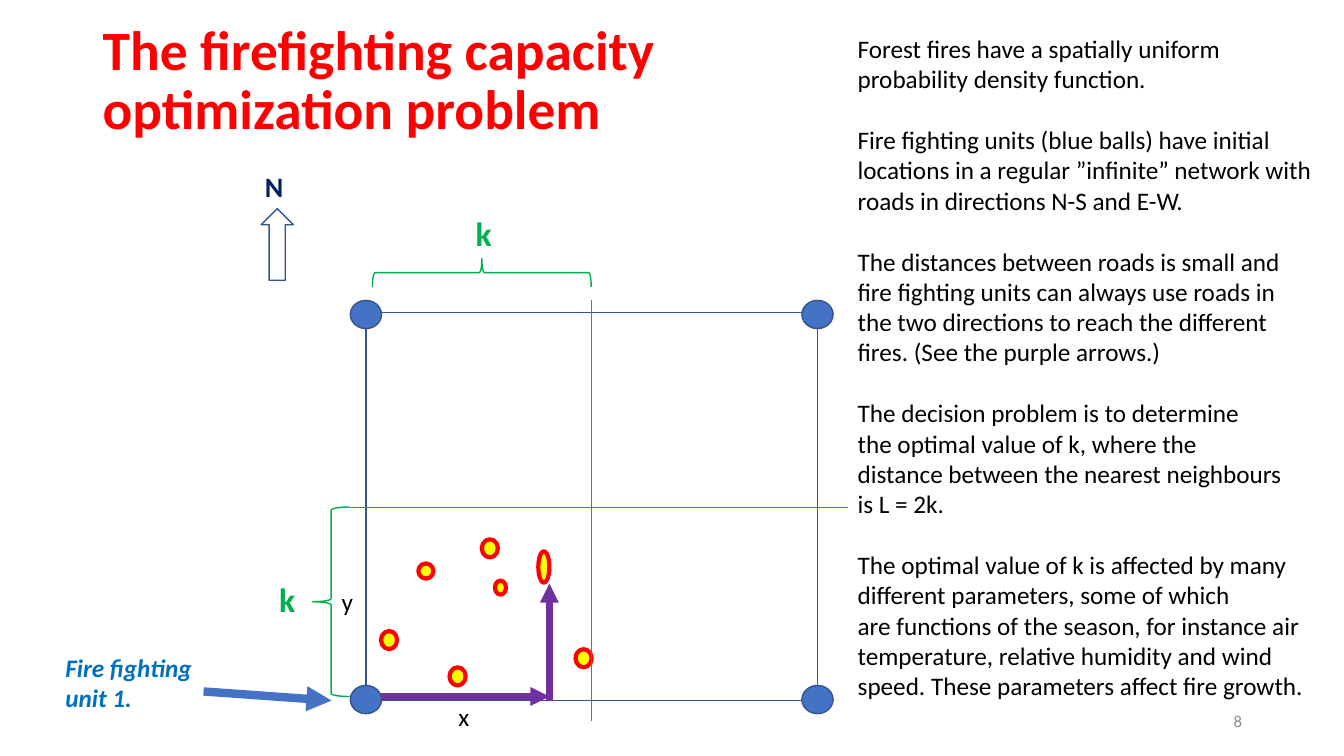
from dataclasses import dataclass

from lxml import etree
from pptx import Presentation
from pptx.dml.color import RGBColor
from pptx.enum.shapes import MSO_CONNECTOR, MSO_SHAPE
from pptx.enum.text import MSO_ANCHOR, PP_ALIGN
from pptx.oxml.ns import qn
from pptx.util import Inches, Pt

# The slide is laid out on a grid of square cells
CELL = Inches(0.1)
COLUMNS, ROWS = 133.33, 75

RED = RGBColor(0xFF, 0x00, 0x00)
YELLOW = RGBColor(0xFF, 0xFF, 0x00)
GREEN = RGBColor(0x00, 0xB0, 0x50)
PURPLE = RGBColor(0x70, 0x30, 0xA0)
BLUE = RGBColor(0x44, 0x72, 0xC4)
OUTLINE = RGBColor(0x32, 0x54, 0x91)
SKY = RGBColor(0x00, 0x70, 0xC0)
NAVY = RGBColor(0x00, 0x20, 0x60)
BLACK = RGBColor(0x00, 0x00, 0x00)
GRAY = RGBColor(0x8C, 0x8C, 0x8C)

FONT = "Calibri"
LEFT, RIGHT = PP_ALIGN.LEFT, PP_ALIGN.RIGHT
TOP, MIDDLE = MSO_ANCHOR.TOP, MSO_ANCHOR.MIDDLE
RECTANGLE, OVAL = MSO_SHAPE.RECTANGLE, MSO_SHAPE.OVAL
BRACE, UP_ARROW = MSO_SHAPE.LEFT_BRACE, MSO_SHAPE.UP_ARROW
STRAIGHT = MSO_CONNECTOR.STRAIGHT


@dataclass
class Figure:
    kind: MSO_SHAPE
    left: float
    top: float
    width: float
    height: float
    line: RGBColor = OUTLINE
    weight: float = 1
    fill: RGBColor | None = None
    rotation: float = 0


@dataclass
class Line:
    start: tuple[float, float]
    end: tuple[float, float]
    color: RGBColor
    weight: float
    arrow: bool = False


@dataclass
class Label:
    text: str
    left: float
    top: float
    width: float
    height: float
    size: float
    color: RGBColor
    bold: bool = False
    italic: bool = False
    align: PP_ALIGN = LEFT
    anchor: MSO_ANCHOR = TOP
    spacing: float = 1
    gap: float = 0


NET_LEFT, NET_TOP, NET_WIDTH, NET_HEIGHT = 36.3, 31, 44.8, 38.5
NET_MIDDLE = NET_LEFT + NET_WIDTH / 2
HALF_ROAD = 50.3
UNIT_WIDTH, UNIT_HEIGHT = 3.1, 2.8

UNITS = [
    Figure(OVAL, x - UNIT_WIDTH / 2, y, UNIT_WIDTH, UNIT_HEIGHT, fill=BLUE)
    for x in (NET_LEFT, NET_LEFT + NET_WIDTH)
    for y in (29.8, 68)
]
FIRES = [
    Figure(OVAL, *place, line=RED, weight=3, fill=YELLOW)
    for place in (
        (47.8, 53.5, 1.6, 1.8),
        (41.5, 55.9, 1.5, 1.5),
        (53.4, 54.7, 1.1, 3.1),
        (37.8, 62.6, 1.6, 1.8),
        (49.1, 57.6, 1.1, 1.4),
        (57.1, 64.4, 1.6, 1.8),
        (44.6, 66.2, 1.6, 1.8),
    )
]
FIGURES = [
    Figure(RECTANGLE, NET_LEFT, NET_TOP, NET_WIDTH, NET_HEIGHT),
    *UNITS,
    Figure(BRACE, 31, HALF_ROAD, 3.7, 18.8, line=GREEN),
    Figure(BRACE, 46.4, 16.2, 2.8, 21.7, line=GREEN, rotation=90),
    *FIRES,
    Figure(UP_ARROW, 25.9, 20.7, 3.2, 7.1),
]
LINES = [
    Line((34.7, HALF_ROAD), (84.1, HALF_ROAD), BLUE, 0.5),
    Line((NET_MIDDLE, 29.8), (NET_MIDDLE, 71.5), BLUE, 0.5),
    Line((20.2, 68.6), (32.9, 69.5), BLUE, 6, arrow=True),
    Line((54.5, 69.5), (54.5, 57.9), PURPLE, 4.5, arrow=True),
    Line((37.8, 69.1), (54.5, 69.1), PURPLE, 4.5, arrow=True),
]

# A new line is a line break within its paragraph; an empty line starts a new paragraph
EXPLANATION = """\
Forest fires have a spatially uniform probability density function.

Fire fighting units (blue balls) have initial locations in a regular ”infinite” network with roads in directions N-S and E-W.

The distances between roads is small and fire fighting units can always use roads in the two directions to reach the different fires. (See the purple arrows.)

The decision problem is to determine
the optimal value of k, where the
distance between the nearest neighbours
is L = 2k.

The optimal value of k is affected by many
different parameters, some of which
are functions of the season, for instance air temperature, relative humidity and wind speed. These parameters affect fire growth."""

LABELS = [
    Label("The firefighting capacity\noptimization problem", 9.2, 1.7, 67.2, 14.5,
          39.6, RED, bold=True, spacing=0.9),
    Label("8", 94.2, 69.5, 30, 4, 12, GRAY, align=RIGHT, anchor=MIDDLE),
    Label("k", 26.7, 56.9, 3.2, 5, 24, GREEN, bold=True),
    Label("k", 46.2, 20.6, 3.2, 5, 24, GREEN, bold=True),
    Label("Fire fighting\nunit 1.", 5.5, 64.2, 15.8, 7.1, 18, SKY, bold=True, italic=True),
    Label("x", 44.5, 69.1, 3.1, 4, 18, BLACK),
    Label("y", 32.9, 57.7, 3.2, 4, 18, BLACK),
    Label(EXPLANATION, 84.1, 2.8, 47.1, 70.7, 18, BLACK, gap=22),
    Label("N", 25.3, 16.3, 5.2, 4.4, 20, NAVY, bold=True),
]


def cells(*counts: float) -> list[int]:
    """Turn grid cells into slide lengths."""
    return [round(count * CELL) for count in counts]


def draw_figure(page, figure: Figure) -> None:
    shape = page.shapes.add_shape(
        figure.kind, *cells(figure.left, figure.top, figure.width, figure.height)
    )
    shape.shadow.inherit = False
    shape.rotation = figure.rotation
    shape.line.color.rgb = figure.line
    shape.line.width = Pt(figure.weight)
    if figure.fill is None:
        shape.fill.background()
    else:
        shape.fill.solid()
        shape.fill.fore_color.rgb = figure.fill


def draw_line(page, line: Line) -> None:
    connector = page.shapes.add_connector(STRAIGHT, *cells(*line.start, *line.end))
    connector.line.color.rgb = line.color
    connector.line.width = Pt(line.weight)
    if line.arrow:
        etree.SubElement(connector.line._get_or_add_ln(), qn("a:tailEnd"), type="triangle")
    etree.SubElement(connector._element.spPr, qn("a:effectLst"))


def draw_label(page, label: Label) -> None:
    box = page.shapes.add_textbox(*cells(label.left, label.top, label.width, label.height))
    frame = box.text_frame
    frame.word_wrap = True
    frame.vertical_anchor = label.anchor
    for index, text in enumerate(label.text.split("\n\n")):
        para = frame.add_paragraph() if index else frame.paragraphs[0]
        para.text = text.replace("\n", "\v")
        para.alignment = label.align
        para.line_spacing = label.spacing
        para.space_before = Pt(label.gap if index else 0)
        para.font.name = FONT
        para.font.size = Pt(label.size)
        para.font.bold = label.bold
        para.font.italic = label.italic
        para.font.color.rgb = label.color


def main() -> None:
    deck = Presentation()
    deck.slide_width, deck.slide_height = cells(COLUMNS, ROWS)
    page = deck.slides.add_slide(deck.slide_layouts[6])
    for figure in FIGURES:
        draw_figure(page, figure)
    for line in LINES:
        draw_line(page, line)
    for label in LABELS:
        draw_label(page, label)
    deck.save("out.pptx")


if __name__ == "__main__":
    main()
